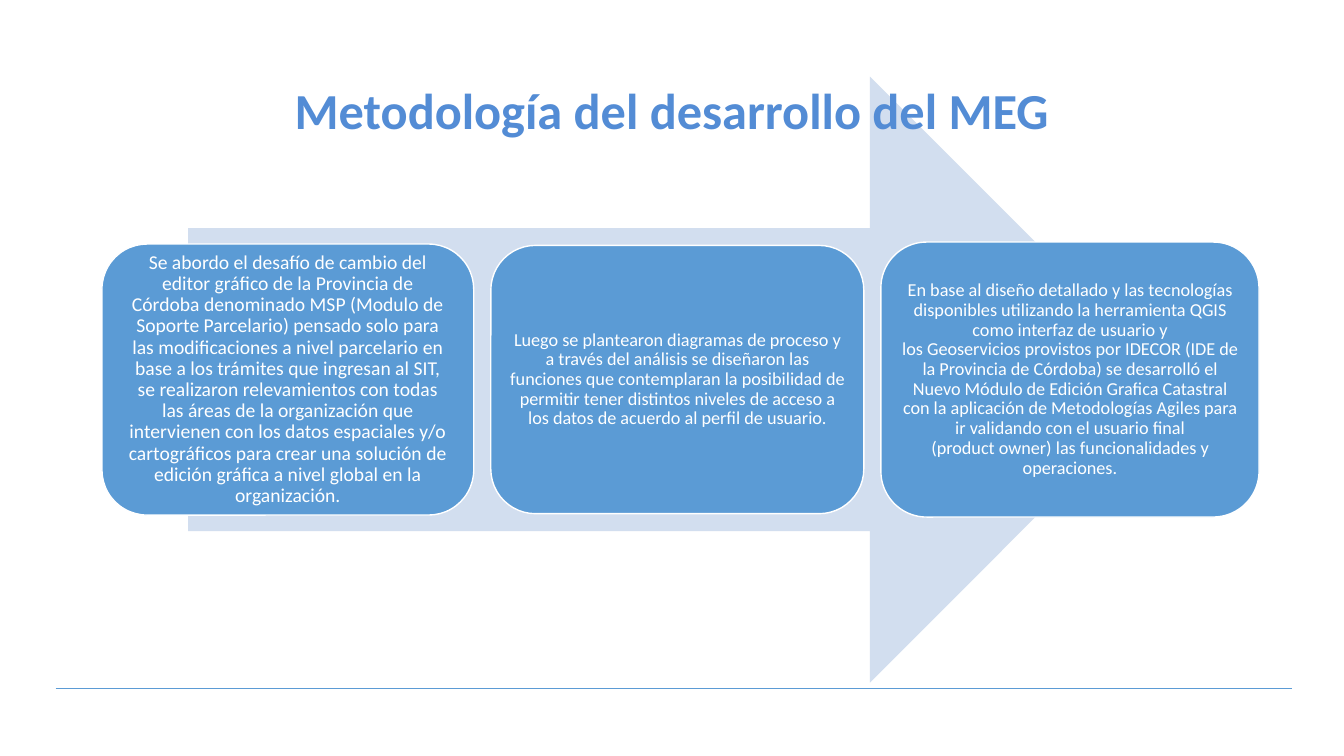
from lxml import etree
from pptx import Presentation
from pptx.dml.color import RGBColor
from pptx.enum.shapes import MSO_CONNECTOR, MSO_SHAPE
from pptx.enum.text import MSO_ANCHOR, PP_ALIGN
from pptx.oxml.ns import qn
from pptx.util import Cm, Pt

STRAIGHT = MSO_CONNECTOR.STRAIGHT
RIGHT_ARROW = MSO_SHAPE.RIGHT_ARROW
ROUNDED = MSO_SHAPE.ROUNDED_RECTANGLE
MIDDLE = MSO_ANCHOR.MIDDLE
CENTER = PP_ALIGN.CENTER

FONT = "Calibri"
BLUE, PALE_BLUE, TITLE_BLUE, WHITE = "5B9BD5", "D2DEEF", "538CD5", "FFFFFF"
HARD_SPACE = chr(160)

TITLE = "Metodología del desarrollo del MEG"
# Each step: width, height, font size, inset, text ("~" keeps two words together)
STEPS = [
    (9.37, 6.83, 14, 0.15,
     "Se abordo el desafío de cambio del editor~gráfico de la Provincia de "
     "Córdoba~denominado MSP (Modulo de Soporte~Parcelario) pensado solo para "
     "las~modificaciones a nivel parcelario en base~a los trámites que ingresan "
     "al SIT, se~realizaron relevamientos con todas las~áreas de la organización "
     "que intervienen~con los datos espaciales y/o cartográficos~para crear una "
     "solución de edición gráfica~a nivel global en la organización."),
    (9.4, 6.76, 13, 0.13,
     "Luego se plantearon diagramas de~proceso y a través del análisis se~"
     "diseñaron las funciones que~contemplaran la posibilidad de permitir~tener "
     "distintos niveles de acceso a los~datos de acuerdo al perfil de usuario."),
    (9.53, 6.93, 13, 0.13,
     "En base al diseño detallado y las~tecnologías disponibles utilizando la~"
     "herramienta QGIS como interfaz de~usuario y "
     "los~Geoservicios~provistos por~IDECOR (IDE de la Provincia de Córdoba)~"
     "se desarrolló el Nuevo Módulo de Edición~Grafica Catastral con la "
     "aplicación de~Metodologías Agiles para ir validando con~el usuario final "
     "(product~owner) las~funcionalidades y operaciones."),
]
STEP_GAP = 0.43


def color(hex_text):
    return RGBColor.from_string(hex_text)


def write(shape, text, size, ink, bold=False, inset=0.25):
    frame = shape.text_frame
    frame.word_wrap = True
    frame.vertical_anchor = MIDDLE
    frame.margin_left = frame.margin_right = Cm(inset)
    frame.margin_top = frame.margin_bottom = Cm(inset)
    para = frame.paragraphs[0]
    para.alignment = CENTER
    para.line_spacing = 0.9
    span = para.add_run()
    span.text = text.replace("~", HARD_SPACE)
    span.font.name = FONT
    span.font.size = Pt(size)
    span.font.bold = bold
    span.font.color.rgb = color(ink)


def add_filled(page, kind, box, fill, line=None):
    shape = page.shapes.add_shape(kind, *map(Cm, box))
    shape.shadow.inherit = False
    shape.fill.solid()
    shape.fill.fore_color.rgb = color(fill)
    if line:
        shape.line.color.rgb = color(line)
        shape.line.width = Pt(1)
    else:
        shape.line.fill.background()
    return shape


def add_footer_rule(page, left, right, top):
    rule = page.shapes.add_connector(STRAIGHT, Cm(left), Cm(top), Cm(right), Cm(top))
    rule.line.color.rgb = color(BLUE)
    rule.line.width = Pt(0.75)
    etree.SubElement(rule._element.spPr, qn("a:effectLst"))


def add_process(page, left, top, width, height):
    """Arrow behind a row of steps centred on its axis."""
    margin = 2.17
    arrow_box = (left + margin, top, width - 2 * margin, height)
    add_filled(page, RIGHT_ARROW, arrow_box, PALE_BLUE)
    middle = top + height / 2
    for step_width, step_height, size, inset, text in STEPS:
        step_box = (left, middle - step_height / 2, step_width, step_height)
        step = add_filled(page, ROUNDED, step_box, BLUE, line=WHITE)
        write(step, text, size, WHITE, inset=inset)
        left += step_width + STEP_GAP


def add_title(page, left, top, width, height):
    title = page.shapes.add_textbox(Cm(left), Cm(top), Cm(width), Cm(height))
    write(title, TITLE, 36, TITLE_BLUE, bold=True)


def main():
    deck = Presentation()
    deck.slide_width, deck.slide_height = Cm(33.87), Cm(19.05)
    page = deck.slides.add_slide(deck.slide_layouts[6])
    add_footer_rule(page, 1.4, 32.56, 17.35)
    add_process(page, 2.57, 1.93, 29.16, 15.27)
    add_title(page, 2.33, 1.02, 29.21, 3.68)
    deck.save("out.pptx")


if __name__ == "__main__":
    main()
